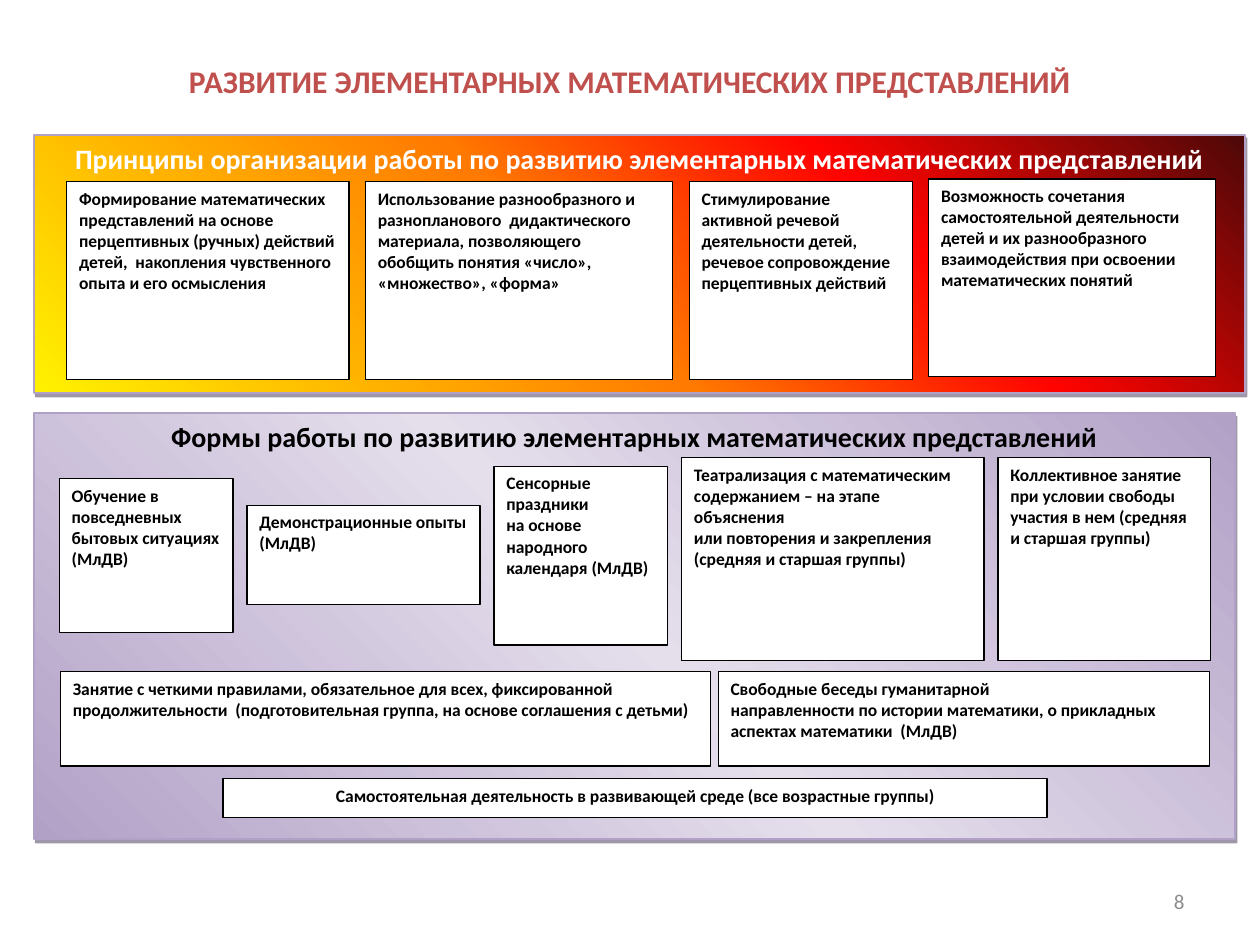
from lxml.etree import SubElement
from pptx import Presentation
from pptx.dml.color import RGBColor
from pptx.enum.shapes import MSO_SHAPE
from pptx.enum.text import MSO_ANCHOR, PP_ALIGN
from pptx.oxml import parse_xml
from pptx.oxml.ns import nsdecls, qn
from pptx.util import Inches, Pt

COLORS = {
    "white": "FFFFFF",
    "black": "000000",
    "title": "C0504D",
    "number": "8C8C8C",
    "border": "B2A1C7",
    "shadow": "3F3151",
}
FIRE = [(0, "FFF200"), (45, "FF7A00"), (70, "FF0300"), (100, "4D0808")]
LILAC = [(0, "B2A1C7"), (50, "E5DFEC"), (100, "B2A1C7")]

PRINCIPLES = [
    (2.24, 0.37, 1.57, ["Формирование математических представлений на основе перцептивных (ручных) действий детей,  накопления чувственного опыта и его осмысления"]),
    (2.44, 0.37, 1.57, ["Использование разнообразного и разнопланового  дидактического материала, позволяющего обобщить понятия «число», «множество», «форма»"]),
    (1.77, 0.37, 1.57, ["Стимулирование активной речевой деятельности детей, речевое сопровождение перцептивных действий"]),
    (2.28, 0.35, 1.57, ["Возможность сочетания самостоятельной деятельности детей и их разнообразного взаимодействия при освоении математических понятий"]),
]
GROUP_FORMS = [
    (1.38, 0.52, 1.22, ["Обучение в", "повседневных", "бытовых ситуациях", "(МлДВ)"]),
    (1.85, 0.73, 0.79, ["Демонстрационные опыты", "(МлДВ)"]),
    (1.38, 0.42, 1.42, ["Сенсорные праздники", "на основе народного", "календаря (МлДВ)"]),
    (2.4, 0.35, 1.61, ["Театрализация с математическим", "содержанием – на этапе объяснения",
                       "или повторения и закрепления", "(средняя и старшая группы)"]),
    (1.69, 0.35, 1.61, ["Коллективное занятие", "при условии свободы",
                        "участия в нем (средняя", "и старшая группы)"]),
]
LESSON_FORMS = [
    (5.16, 2.05, 0.75, ["Занятие с четкими правилами, обязательное для всех, фиксированной продолжительности  (подготовительная группа, на основе соглашения с детьми)"]),
    (3.9, 2.05, 0.75, ["Свободные беседы гуманитарной",
                       "направленности по истории математики, о прикладных аспектах математики  (МлДВ)"]),
]
FREE_FORMS = [
    (6.54, 2.9, 0.31, ["Самостоятельная деятельность в развивающей среде (все возрастные группы)"]),
]


def color(name):
    return RGBColor.from_string(COLORS[name])


def write(shape, lines, size, color_name, align=PP_ALIGN.LEFT, bold=True, anchor=MSO_ANCHOR.TOP):
    frame = shape.text_frame
    frame.word_wrap = True
    frame.vertical_anchor = anchor
    frame.text = "\n".join(lines)
    for paragraph in frame.paragraphs:
        paragraph.alignment = align
        paragraph.font.name = "Calibri"
        paragraph.font.size = Pt(size)
        paragraph.font.bold = bold
        paragraph.font.color.rgb = color(color_name)


def add_rectangle(slide, left, top, width, height):
    shape = slide.shapes.add_shape(
        MSO_SHAPE.RECTANGLE, Inches(left), Inches(top), Inches(width), Inches(height))
    shape.shadow.inherit = False
    shape.fill.solid()
    shape.fill.fore_color.rgb = color("white")
    return shape


def set_gradient(shape, stops):
    properties = shape._element.spPr
    gradient = parse_xml(f'<a:gradFill {nsdecls("a")} rotWithShape="1"><a:gsLst/>'
                         '<a:lin ang="18900000" scaled="0"/></a:gradFill>')
    for position, value in stops:
        stop = SubElement(gradient[0], qn("a:gs"), pos=str(position * 1000))
        SubElement(stop, qn("a:srgbClr"), val=value)
    properties.replace(properties.find(qn("a:solidFill")), gradient)


def set_shadow(shape):
    effects = shape._element.spPr.find(qn("a:effectLst"))
    shadow = SubElement(effects, qn("a:outerShdw"), dist=str(Pt(2.2)),
                        dir=str(63 * 60000), algn="ctr", rotWithShape="0")
    shade = SubElement(shadow, qn("a:srgbClr"), val=COLORS["shadow"])
    SubElement(shade, qn("a:alpha"), val="50000")


def add_title(slide, left, top, width, height):
    shape = add_rectangle(slide, left, top, width, height)
    shape.line.fill.background()
    write(shape, ["РАЗВИТИЕ ЭЛЕМЕНТАРНЫХ МАТЕМАТИЧЕСКИХ ПРЕДСТАВЛЕНИЙ"], 18, "title", PP_ALIGN.CENTER)


def add_panel(slide, left, top, width, height, heading, heading_color, stops):
    panel = add_rectangle(slide, left, top, width, height)
    set_gradient(panel, stops)
    set_shadow(panel)
    panel.line.color.rgb = color("border")
    panel.line.width = Pt(1)
    write(panel, [heading], 16, heading_color, PP_ALIGN.CENTER)


def add_cards(slide, left, top, gap, cards, align=PP_ALIGN.LEFT):
    for width, offset, height, lines in cards:
        card = add_rectangle(slide, left, top + offset, width, height)
        card.line.color.rgb = color("black")
        card.line.width = Pt(0.75)
        write(card, lines, 10, "black", align)
        left += width + gap


def add_principles(slide, left, top, width, height):
    add_panel(slide, left, top, width, height,
              "Принципы организации работы по развитию элементарных математических представлений",
              "white", FIRE)
    add_cards(slide, left + 0.26, top, 0.13, PRINCIPLES)


def add_forms(slide, left, top, width, height):
    add_panel(slide, left, top, width, height,
              "Формы работы по развитию элементарных математических представлений",
              "black", LILAC)
    add_cards(slide, left + 0.2, top, 0.11, GROUP_FORMS)
    add_cards(slide, left + 0.21, top, 0.06, LESSON_FORMS)
    add_cards(slide, left + 1.5, top, 0, FREE_FORMS, PP_ALIGN.CENTER)


def add_page_number(slide, left, top, width, height):
    box = slide.shapes.add_textbox(Inches(left), Inches(top), Inches(width), Inches(height))
    write(box, ["8"], 12, "number", PP_ALIGN.RIGHT, False, MSO_ANCHOR.MIDDLE)


def main():
    presentation = Presentation()
    presentation.slide_width = Inches(10)
    presentation.slide_height = Inches(7.5)
    slide = presentation.slides.add_slide(presentation.slide_layouts[6])
    add_page_number(slide, 7.17, 6.95, 2.33, 0.4)
    add_forms(slide, 0.27, 3.28, 9.53, 3.38)
    add_principles(slide, 0.27, 1.07, 9.61, 2.05)
    add_title(slide, 0.51, 0.44, 8.98, 0.49)
    presentation.save("out.pptx")


if __name__ == "__main__":
    main()
